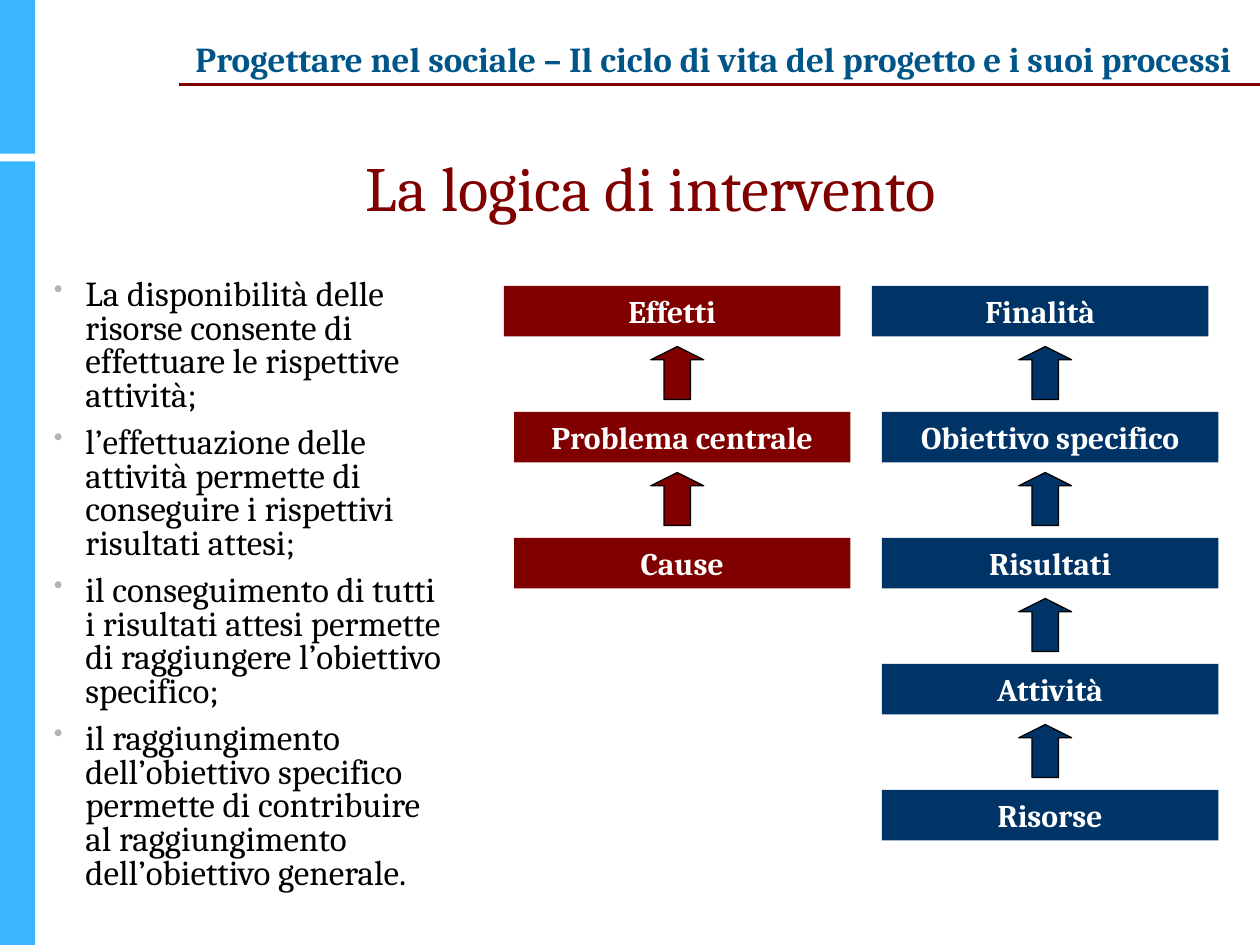
import pptx
import pptx.dml.color
import pptx.enum.shapes
import pptx.enum.text
import pptx.oxml
import pptx.oxml.ns
import pptx.util
from lxml import etree

WIDTH, HEIGHT = 10, 7.5
FONT = "Cambria"
SKY, TEAL, NAVY, MAROON = "3AB5FF", "005588", "003366", "800000"
BLACK, WHITE, GREY = "000000", "FFFFFF", "B2B3B5"

SHAPES = pptx.enum.shapes.MSO_SHAPE
ANCHOR = pptx.enum.text.MSO_ANCHOR
ALIGN = pptx.enum.text.PP_ALIGN
Inches, Pt = pptx.util.Inches, pptx.util.Pt

POINTS = [
    "La disponibilità delle risorse consente di effettuare le rispettive attività;",
    "l’effettuazione delle attività permette di conseguire i rispettivi risultati attesi;",
    "il conseguimento di tutti i risultati attesi permette di raggiungere l’obiettivo specifico;",
    "il raggiungimento dell’obiettivo specifico permette di contribuire "
    "al raggiungimento dell’obiettivo generale.",
]
PROBLEMS = ["Effetti", "Problema centrale", "Cause"]
GOALS = ["Finalità", "Obiettivo specifico", "Risultati", "Attività", "Risorse"]


def color(value):
    return pptx.dml.color.RGBColor.from_string(value)


def add_shape(slide, kind, box, fill, outline=None):
    shape = slide.shapes.add_shape(kind, *map(Inches, box))
    shape.shadow.inherit = False
    shape.fill.solid()
    shape.fill.fore_color.rgb = color(fill)
    if outline:
        shape.line.color.rgb = color(outline)
        shape.line.width = Pt(0.75)
    else:
        shape.line.fill.background()
    return shape


def add_text_box(slide, box, anchor=ANCHOR.TOP, wrap=True):
    frame = slide.shapes.add_textbox(*map(Inches, box)).text_frame
    frame.word_wrap = wrap
    frame.vertical_anchor = anchor
    return frame


def write(paragraph, text, size, text_color, bold=False, align=ALIGN.CENTER):
    paragraph.alignment = align
    run = paragraph.add_run()
    run.text = text
    run.font.name = FONT
    run.font.size = Pt(size)
    run.font.bold = bold
    run.font.color.rgb = color(text_color)


def add_bullet(paragraph):
    properties = paragraph._p.get_or_add_pPr()
    properties.set("marL", str(Inches(0.25)))
    properties.set("indent", str(-Inches(0.25)))
    namespace = pptx.oxml.ns.nsdecls("a")
    for element in (
        f'<a:buClr {namespace}><a:srgbClr val="{GREY}"/></a:buClr>',
        f'<a:buSzPct {namespace} val="75000"/>',
        f'<a:buChar {namespace} char="•"/>',
    ):
        properties.append(pptx.oxml.parse_xml(element))


def add_side_band(slide, left, top, width, height):
    gap_top, gap = 1.22, 0.06
    lower = gap_top + gap
    add_shape(slide, SHAPES.RECTANGLE, (left, top, width, gap_top), SKY)
    add_shape(slide, SHAPES.RECTANGLE, (left, top + lower, width, height - lower), SKY)


def add_header(slide, left, top, width, height):
    rule_left, rule_top = left + 0.08, top + 0.42
    rule = slide.shapes.add_connector(
        pptx.enum.shapes.MSO_CONNECTOR.STRAIGHT,
        *map(Inches, (rule_left, rule_top, WIDTH, rule_top)))
    rule.line.color.rgb = color(MAROON)
    rule.line.width = Pt(1.5)
    etree.SubElement(rule._element.spPr, pptx.oxml.ns.qn("a:effectLst"))
    frame = add_text_box(slide, (left, top, width, height), wrap=False)
    write(frame.paragraphs[0],
          "Progettare nel sociale – Il ciclo di vita del progetto e i suoi processi",
          20, TEAL, bold=True)


def add_title(slide, *box):
    paragraph = add_text_box(slide, box, ANCHOR.BOTTOM).paragraphs[0]
    paragraph.line_spacing = 0.9
    write(paragraph, "La logica di intervento", 36, MAROON)


def add_points(slide, *box):
    frame = add_text_box(slide, box)
    for index, text in enumerate(POINTS):
        paragraph = frame.add_paragraph() if index else frame.paragraphs[0]
        add_bullet(paragraph)
        paragraph.line_spacing = 0.8
        paragraph.space_after = Pt(7.7)
        write(paragraph, text, 20, BLACK, align=ALIGN.LEFT)


def add_ladder(slide, left, top, width, row, labels, fill):
    """Stack labelled bars, one per row, with an arrow up from each to the one above."""
    bar_height, arrow_size, step_in = 0.4, 0.42, 0.08
    for index, label in enumerate(labels):
        bar_left = left + (step_in if index else 0)
        bar_top = top + index * row
        bar = add_shape(slide, SHAPES.RECTANGLE,
                        (bar_left, bar_top, width, bar_height), fill)
        frame = bar.text_frame
        frame.word_wrap = True
        frame.vertical_anchor = ANCHOR.TOP
        frame.margin_bottom = 0
        write(frame.paragraphs[0], label, 18, WHITE, bold=True)
        if index:
            arrow_left = left + step_in / 2 + (width - arrow_size) / 2
            arrow = add_shape(slide, SHAPES.DOWN_ARROW,
                              (arrow_left, bar_top - 0.52, arrow_size, arrow_size),
                              fill, BLACK)
            arrow.rotation = 180
            arrow.adjustments[0] = 0.5
            arrow.adjustments[1] = 0.25


def main():
    presentation = pptx.Presentation()
    presentation.slide_width = Inches(WIDTH)
    presentation.slide_height = Inches(HEIGHT)
    slide = presentation.slides.add_slide(presentation.slide_layouts[6])

    add_side_band(slide, 0, 0, 0.28, HEIGHT)
    add_header(slide, 1.34, 0.25, 8.65, 0.7)
    add_title(slide, 0.33, 1.17, 9.67, 0.67)
    add_points(slide, 0.33, 2.17, 3.33, 5.16)

    first_column, column_step = 4, 2.92
    for column, (labels, fill) in enumerate([(PROBLEMS, MAROON), (GOALS, NAVY)]):
        add_ladder(slide, first_column + column * column_step, 2.27, 2.67, 1, labels, fill)

    presentation.save("out.pptx")


if __name__ == "__main__":
    main()
